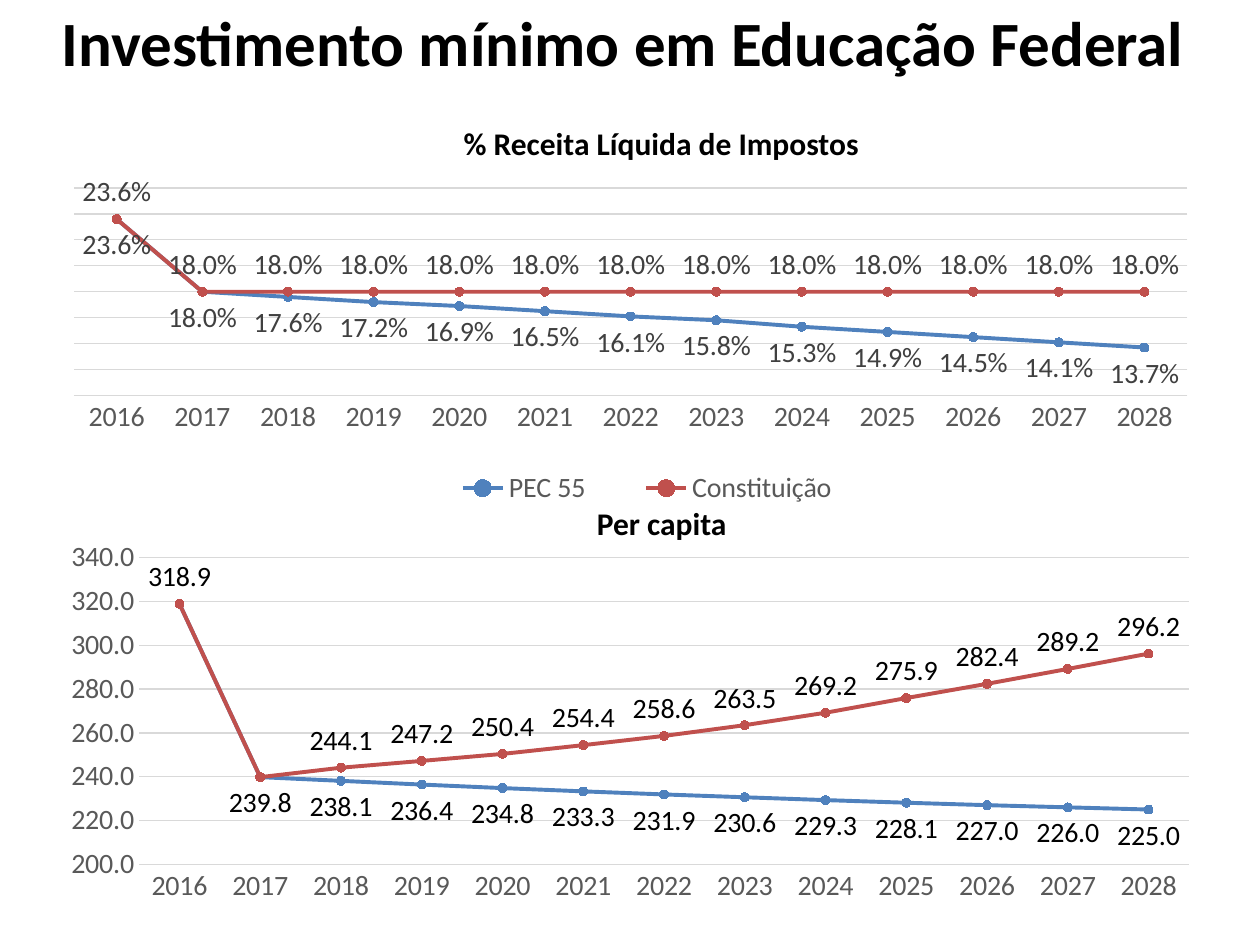
from dataclasses import dataclass

from lxml import etree
from pptx import Presentation, util as u
from pptx.chart import data as cd
from pptx.dml.color import RGBColor
from pptx.enum import chart as ce, text as te
from pptx.oxml import ns

Box = tuple[float, float, float, float]

FONT = "Calibri"
BLACK, GREY, DARK, PALE = "000000", "595959", "404040", "D9D9D9"
BLUE, RED = "4F81BD", "C0504D"
YEARS = [str(year) for year in range(2016, 2029)]


@dataclass
class Line:
    name: str
    vals: list[float]
    hue: str
    side: ce.XL_LABEL_POSITION
    blank: int | None = None  # point without a label


@dataclass
class Graph:
    box: Box
    lines: list[Line]
    form: str
    low: float
    high: float
    step: float
    ink: str
    plot: Box | None = None  # fractions of the chart
    legend: Box | None = None  # fractions of the chart


@dataclass
class Label:
    words: str
    box: Box


BELOW, ABOVE = ce.XL_LABEL_POSITION.BELOW, ce.XL_LABEL_POSITION.ABOVE
GRAPHS = [
    Graph((31, 96.5, 658, 211), [
        Line("PEC 55", [0.236, 0.18, 0.176, 0.172, 0.169, 0.165, 0.161, 0.158,
                        0.153, 0.149, 0.145, 0.141, 0.137], BLUE, BELOW),
        Line("Constituição", [0.236] + [0.18] * 12, RED, ABOVE),
    ], "0.0%", 0.1, 0.26, 0.02, DARK, (0.017, 0.052, 0.967, 0.562),
        (0.31, 0.81, 0.41, 0.11)),
    Graph((27.4, 304.6, 665.3, 216), [
        Line("Series 1", [318.9, 239.8, 238.1, 236.4, 234.8, 233.3, 231.9, 230.6,
                          229.3, 228.1, 227.0, 226.0, 225.0], BLUE, BELOW, 0),
        Line("Series 2", [318.9, 239.8, 244.1, 247.2, 250.4, 254.4, 258.6, 263.5,
                          269.2, 275.9, 282.4, 289.2, 296.2], RED, ABOVE, 1),
    ], "#,##0.0", 200, 340, 20, BLACK),
]
LABELS = [
    Label("% Receita Líquida de Impostos", (257.8, 67.5, 242, 29)),
    Label("Per capita", (334, 284.4, 89.3, 29)),
]


def tint(hue: str) -> RGBColor:
    return RGBColor.from_string(hue)


def put(thing, **vals) -> None:
    """Set attributes from format values."""
    for key, val in vals.items():
        setattr(thing, key, val)


def style(font, size: float, hue: str, bold: bool = False) -> None:
    put(font, name=FONT, size=u.Pt(size), bold=bold)
    font.color.rgb = tint(hue)


def stroke(line, hue: str, width: float) -> None:
    line.color.rgb = tint(hue)
    line.width = u.Pt(width)


def paint(fill, hue: str) -> None:
    fill.solid()
    fill.fore_color.rgb = tint(hue)


def node(root, tag: str, val=None):
    kid = etree.SubElement(root, ns.qn(tag))
    if val is not None:
        kid.set("val", str(val))
    return kid


def draw_line(series, line: Line, graph: Graph) -> None:
    series.smooth = False
    stroke(series.format.line, line.hue, 2.25)
    mark = series.marker
    put(mark, style=ce.XL_MARKER_STYLE.CIRCLE, size=5)
    paint(mark.format.fill, line.hue)
    stroke(mark.format.line, line.hue, 0.75)
    tags = series.data_labels
    put(tags, show_value=True, position=line.side,
        number_format=graph.form, number_format_is_linked=False)
    style(tags.font, 16, graph.ink)
    if line.blank is not None:
        root = series._element.find(ns.qn("c:dLbls"))
        gap = node(root, "c:dLbl")
        node(gap, "c:idx", line.blank)
        node(gap, "c:delete", 1)
        root.insert(0, gap)


def place(part, spot: int, box: Box, inner: bool = False) -> None:
    """Fix a chart part at fractions of the chart; spot is the layout's child index."""
    for old in part.findall(ns.qn("c:layout")):
        part.remove(old)
    frame = node(part, "c:layout")
    part.insert(spot, frame)
    lay = node(frame, "c:manualLayout")
    if inner:
        node(lay, "c:layoutTarget", "inner")
    for key in "xy":
        node(lay, f"c:{key}Mode", "edge")
    for key, val in zip("xywh", box):
        node(lay, f"c:{key}", val)


def draw_graph(slide, graph: Graph) -> None:
    data = cd.CategoryChartData(number_format=graph.form)
    data.categories = YEARS
    for line in graph.lines:
        data.add_series(line.name, line.vals)
    chart = slide.shapes.add_chart(
        ce.XL_CHART_TYPE.LINE_MARKERS, *map(u.Pt, graph.box), data).chart
    put(chart, has_title=False, has_legend=graph.legend is not None)
    style(chart.font, 16, BLACK)
    chart.plots[0].vary_by_categories = False

    cats, axis = chart.category_axis, chart.value_axis
    for each in (cats, axis):
        put(each, major_tick_mark=ce.XL_TICK_MARK.NONE,
            minor_tick_mark=ce.XL_TICK_MARK.NONE)
        style(each.tick_labels.font, 16, GREY)
    stroke(cats.format.line, PALE, 0.75)
    put(axis, minimum_scale=graph.low, maximum_scale=graph.high,
        major_unit=graph.step, visible=not graph.legend, has_major_gridlines=True)
    axis.format.line.fill.background()
    stroke(axis.major_gridlines.format.line, PALE, 0.75)
    put(axis.tick_labels, number_format=graph.form, number_format_is_linked=False)

    if graph.legend:
        put(chart.legend, position=ce.XL_LEGEND_POSITION.BOTTOM,
            include_in_layout=False)
        style(chart.legend.font, 16, GREY)
        place(chart.legend._element, 1, graph.legend)
    if graph.plot:
        place(chart._chartSpace.chart.plotArea, 0, graph.plot, True)
    for series, line in zip(chart.plots[0].series, graph.lines):
        draw_line(series, line, graph)


def draw_label(slide, label: Label) -> None:
    frame = slide.shapes.add_textbox(*map(u.Pt, label.box)).text_frame
    put(frame, text=label.words, word_wrap=False,
        auto_size=te.MSO_AUTO_SIZE.SHAPE_TO_FIT_TEXT)
    style(frame.paragraphs[0].runs[0].font, 18, BLACK, True)


def draw_title(slide, words: str) -> None:
    title = slide.shapes.title
    put(title, left=u.Pt(0), top=u.Pt(0), width=u.Pt(720), height=u.Pt(47))
    frame = title.text_frame
    put(frame, text=words, vertical_anchor=te.MSO_ANCHOR.MIDDLE,
        auto_size=te.MSO_AUTO_SIZE.NONE)
    frame.paragraphs[0].alignment = te.PP_ALIGN.CENTER
    style(frame.paragraphs[0].runs[0].font, 36, BLACK, True)


def main() -> None:
    deck = Presentation()
    put(deck, slide_width=u.Pt(720), slide_height=u.Pt(540))
    slide = deck.slides.add_slide(deck.slide_layouts[5])
    draw_title(slide, "Investimento mínimo em Educação Federal ")
    for graph in GRAPHS:
        draw_graph(slide, graph)
    for label in LABELS:
        draw_label(slide, label)
    deck.save("out.pptx")


if __name__ == "__main__":
    main()
